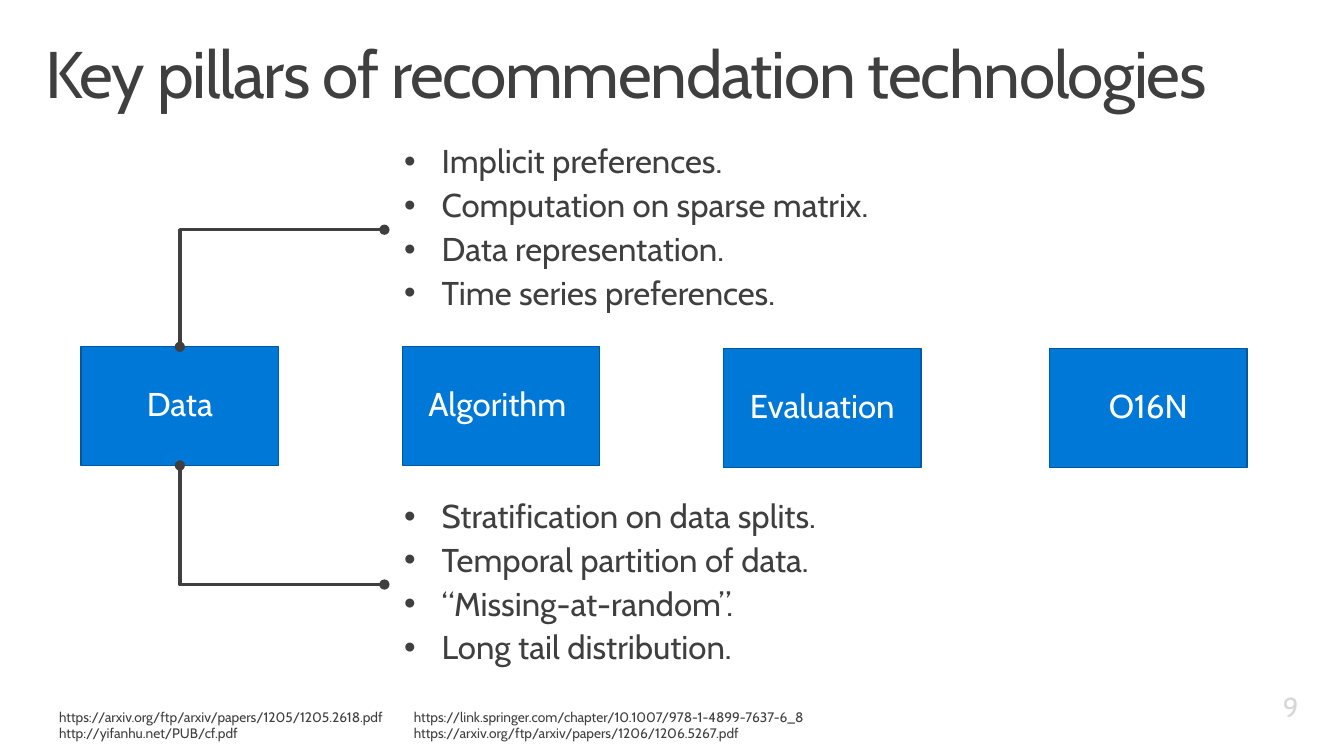
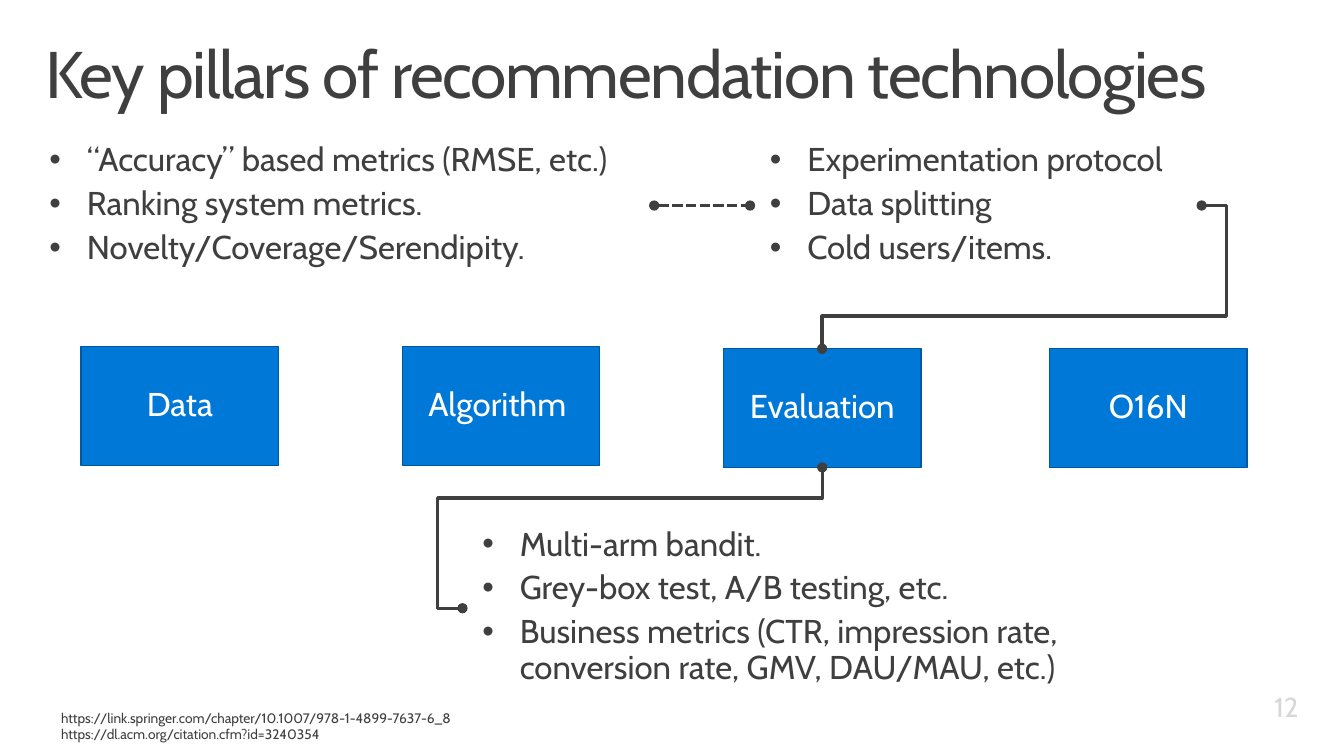
from dataclasses import dataclass

from pptx import Presentation
from pptx.dml.color import RGBColor
from pptx.enum.dml import MSO_LINE
from pptx.enum.shapes import MSO_CONNECTOR, MSO_SHAPE
from pptx.enum.text import MSO_ANCHOR, MSO_AUTO_SIZE, PP_ALIGN
from pptx.oxml.ns import qn
from pptx.util import Pt
from lxml import etree

LEFT, CENTER, RIGHT = PP_ALIGN.LEFT, PP_ALIGN.CENTER, PP_ALIGN.RIGHT
TOP, MIDDLE = MSO_ANCHOR.TOP, MSO_ANCHOR.MIDDLE
NO_FIT = MSO_AUTO_SIZE.NONE
RECTANGLE = MSO_SHAPE.RECTANGLE
STRAIGHT, ELBOW = MSO_CONNECTOR.STRAIGHT, MSO_CONNECTOR.ELBOW
DASH = MSO_LINE.SQUARE_DOT
SIDE_TOP, SIDE_LEFT, SIDE_BOTTOM, SIDE_RIGHT = range(4)
COMPARISON_LAYOUT = 4
PX = 9144


@dataclass(frozen=True)
class Theme:
    font: str = "Cabin"
    ink: str = "3F3F3F"
    muted: str = "D7D7D7"
    accent: str = "0078D7"
    accent_edge: str = "00599F"
    light: str = "FFFFFF"
    title_size: int = 48
    body_size: int = 24
    number_size: int = 20
    source_size: int = 10
    edge_width: float = 0.85
    link_width: float = 2.5


THEME = Theme()
TITLE = "Key pillars of recommendation technologies"
TITLE_BOX = (30, 32, 1300, 100)
NUMBER_BOX = (1024, 697, 306, 41)
PILLAR_SIZE = (200, 120)
PILLARS = {
    "Data": (82, 351),
    "Algorithm ": (407, 351),
    "Evaluation": (732, 353),
    "O16N": (1062, 353),
}
INSETS = {
    "title": (16, 10, 16, 10),
    "body": (20, 16, 20, 16),
    "number": (10, 5, 16, 5),
    "source": (10, 5, 10, 5),
}
BULLET_INDENT = 38
ELBOW_TURNS = {
    (False, False): (90, 0, 0),
    (False, True): (270, 1, 0),
    (True, False): (270, 0, 1),
    (True, True): (90, 1, 1),
}


def color(value):
    return RGBColor.from_string(value)


def apply(target, values):
    for name, value in values.items():
        setattr(target, name, value)


def place(shape, box):
    names = ("left", "top", "width", "height")
    apply(shape, {name: length * PX for name, length in zip(names, box)})


def add_bullet(para):
    properties = para._p.get_or_add_pPr()
    properties.set("marL", str(BULLET_INDENT * PX))
    properties.set("indent", str(-BULLET_INDENT * PX))
    etree.SubElement(properties, qn("a:buChar")).set("char", "•")


def write(shape, lines, inset, size, ink=THEME.ink, anchor=TOP, align=LEFT,
          spacing=0.9, after=0, bullets=False, tracking=0):
    frame = shape.text_frame
    left, top, right, bottom = (length * PX for length in INSETS[inset])
    apply(frame, {
        "word_wrap": True, "auto_size": NO_FIT, "vertical_anchor": anchor,
        "margin_left": left, "margin_top": top,
        "margin_right": right, "margin_bottom": bottom,
    })
    for index, line in enumerate(lines):
        para = frame.add_paragraph() if index else frame.paragraphs[0]
        if bullets:
            add_bullet(para)
        apply(para, {"alignment": align, "line_spacing": spacing,
                     "space_before": Pt(0), "space_after": Pt(after)})
        span = para.add_run()
        span.text = line
        apply(span.font, {"name": THEME.font, "size": Pt(size), "bold": False})
        span.font.color.rgb = color(ink)
        if tracking:
            span.font._element.set("spc", str(tracking * 100))


def add_title(page):
    title = page.shapes.title
    place(title, TITLE_BOX)
    write(title, [TITLE], "title", THEME.title_size, tracking=-1)


def add_number(page, number):
    box = page.shapes.add_textbox(*(length * PX for length in NUMBER_BOX))
    write(box, [str(number)], "number", THEME.number_size, THEME.muted,
          MIDDLE, RIGHT, after=6)


def add_pillars(page):
    pillars = {}
    for name, corner in PILLARS.items():
        pillar = page.shapes.add_shape(
            RECTANGLE, *(length * PX for length in corner + PILLAR_SIZE))
        pillar.shadow.inherit = False
        pillar.fill.solid()
        pillar.fill.fore_color.rgb = color(THEME.accent)
        pillar.line.color.rgb = color(THEME.accent_edge)
        pillar.line.width = Pt(THEME.edge_width)
        write(pillar, [name], "body", THEME.body_size, THEME.light, MIDDLE, CENTER)
        pillars[name] = pillar
    return pillars


def add_lists(page, lists):
    bodies = [holder for holder in page.placeholders
              if holder.placeholder_format.idx]
    for body, (box, lines) in zip(bodies, lists):
        place(body, box)
        write(body, lines, "body", THEME.body_size, after=6, bullets=True)
    for spare in bodies[len(lists):]:
        spare._element.getparent().remove(spare._element)
    return bodies[:len(lists)]


def add_sources(page, box, lines):
    source = page.shapes.add_textbox(*(length * PX for length in box))
    write(source, lines, "source", THEME.source_size, spacing=1.0)


def add_link(page, kind, start, start_side, end, end_side, dash=None):
    link = page.shapes.add_connector(kind, 0, 0, PX, PX)
    link.begin_connect(start, start_side)
    link.end_connect(end, end_side)
    apply(link.line, {"width": Pt(THEME.link_width), "dash_style": dash})
    link.line.color.rgb = color(THEME.ink)
    outline = link.line._get_or_add_ln()
    for name in ("a:headEnd", "a:tailEnd"):
        etree.SubElement(outline, qn(name)).set("type", "oval")
    etree.SubElement(link._element.spPr, qn("a:effectLst"))
    return link


def add_elbow(page, start, start_side, end, end_side, stub=0, overshoot=0):
    link = add_link(page, ELBOW, start, start_side, end, end_side)
    across = link.end_x - link.begin_x
    down = link.end_y - link.begin_y
    middle_x = (link.begin_x + link.end_x) // 2
    middle_y = (link.begin_y + link.end_y) // 2
    length, breadth = abs(down), abs(across)
    apply(link, {"left": middle_x - length // 2, "top": middle_y - breadth // 2,
                 "width": length, "height": breadth})
    turn, flip_h, flip_v = ELBOW_TURNS[down < 0, across > 0]
    frame = link._element.spPr.find(qn("a:xfrm"))
    for name, value in (("rot", turn * 60000), ("flipH", flip_h), ("flipV", flip_v)):
        frame.set(name, str(value))
    geometry = link._element.spPr.find(qn("a:prstGeom"))
    geometry.set("prst", "bentConnector4" if stub else "bentConnector2")
    if stub:
        guides = geometry.find(qn("a:avLst"))
        ratios = (stub * PX / length, 1 + overshoot * PX / breadth)
        for index, ratio in enumerate(ratios, 1):
            guide = etree.SubElement(guides, qn("a:gd"))
            guide.set("name", f"adj{index}")
            guide.set("fmla", f"val {round(ratio * 100000)}")


def add_pillar_page(deck, number, lists, sources):
    page = deck.slides.add_slide(deck.slide_layouts[COMPARISON_LAYOUT])
    add_title(page)
    add_number(page, number)
    pillars = add_pillars(page)
    bodies = add_lists(page, lists)
    for box, lines in sources:
        add_sources(page, box, lines)
    return page, pillars, bodies


def add_data_page(deck):
    lists = [
        ((389, 131, 662, 203), [
            "Implicit preferences.", "Computation on sparse matrix.",
            "Data representation.", "Time series preferences."]),
        ((389, 490, 662, 203), [
            "Stratification on data splits.", "Temporal partition of data.",
            "“Missing-at-random”.", "Long tail distribution."]),
    ]
    sources = [
        ((50, 712, 355, 44), [
            "https://arxiv.org/ftp/arxiv/papers/1205/1205.2618.pdf",
            "http://yifanhu.net/PUB/cf.pdf"]),
        ((409, 712, 420, 44), [
            "https://link.springer.com/chapter/10.1007/978-1-4899-7637-6_8",
            "https://arxiv.org/ftp/arxiv/papers/1206/1206.5267.pdf"]),
    ]
    page, pillars, bodies = add_pillar_page(deck, 9, lists, sources)
    for body, side in zip(bodies, (SIDE_TOP, SIDE_BOTTOM)):
        add_elbow(page, pillars["Data"], side, body, SIDE_LEFT)


def add_evaluation_page(deck):
    lists = [
        ((30, 129, 632, 158), [
            "“Accuracy” based metrics (RMSE, etc.)",
            "Ranking system metrics.", "Novelty/Coverage/Serendipity."]),
        ((759, 129, 457, 158), [
            "Experimentation protocol", "Data splitting", "Cold users/items."]),
        ((468, 518, 662, 195), [
            "Multi-arm bandit.", "Grey-box test, A/B testing, etc.",
            "Business metrics (CTR, impression rate, conversion rate, "
            "GMV, DAU/MAU, etc.)"]),
    ]
    sources = [
        ((52, 713, 420, 45), [
            "https://link.springer.com/chapter/10.1007/978-1-4899-7637-6_8",
            "https://dl.acm.org/citation.cfm?id=3240354"]),
    ]
    page, pillars, bodies = add_pillar_page(deck, 12, lists, sources)
    metrics, protocol, online = bodies
    evaluation = pillars["Evaluation"]
    add_elbow(page, evaluation, SIDE_TOP, protocol, SIDE_RIGHT, 33, 25)
    add_link(page, STRAIGHT, metrics, SIDE_RIGHT, protocol, SIDE_LEFT, DASH)
    add_elbow(page, evaluation, SIDE_BOTTOM, online, SIDE_LEFT, 31, 25)


def main():
    deck = Presentation()
    apply(deck, {"slide_width": 1360 * PX, "slide_height": 765 * PX})
    add_data_page(deck)
    add_evaluation_page(deck)
    deck.save("out.pptx")


if __name__ == "__main__":
    main()
